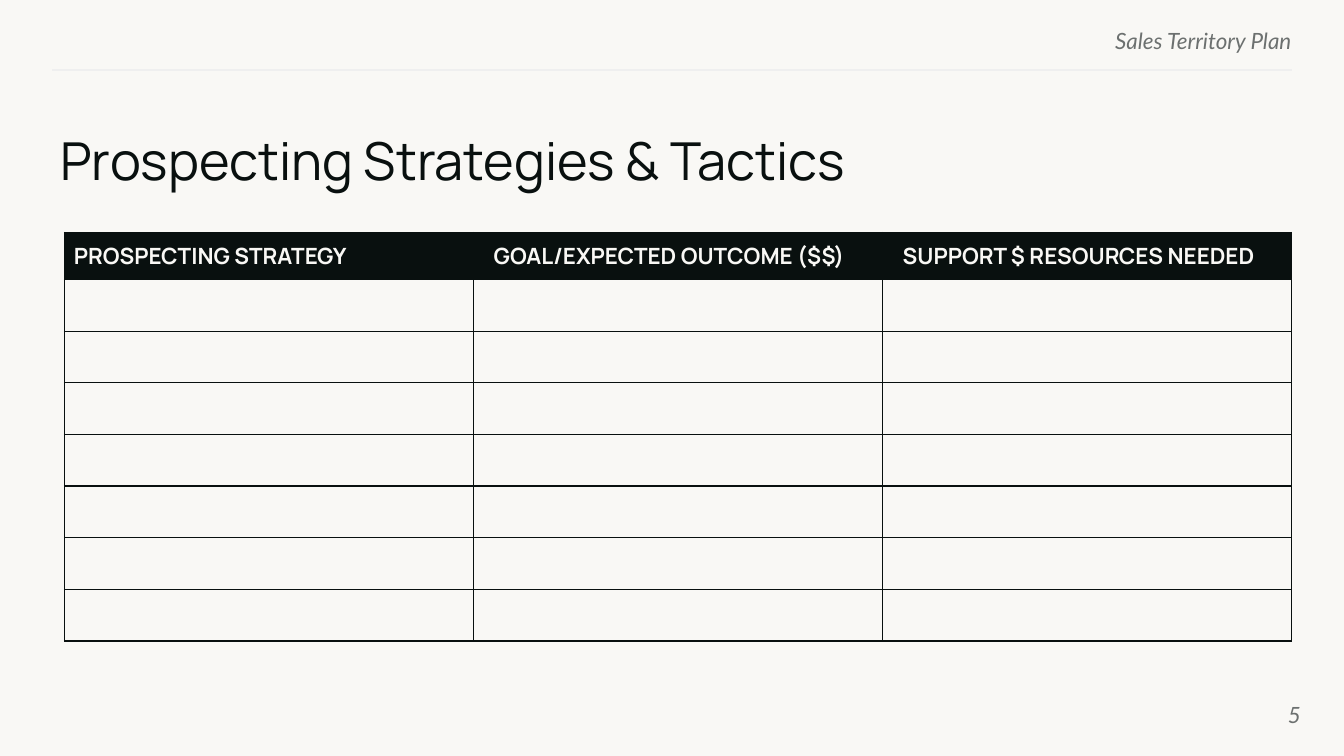
import pptx
import pptx.dml.color
import pptx.enum.shapes
import pptx.enum.text
import pptx.oxml
import pptx.oxml.ns
import pptx.util
import lxml.etree

WIDTH = 10
HEIGHT = WIDTH * 9 / 16
INK, PAPER, GREY, RULE = "09100F", "F9F8F5", "6C706F", "EFEFEF"
HEADINGS = [
    "PROSPECTING STRATEGY",
    "GOAL/EXPECTED OUTCOME ($$)",
    "SUPPORT $ RESOURCES NEEDED",
]
BODY_ROWS = 7
HEADER_HEIGHT = 0.35

ALIGN = pptx.enum.text.PP_ALIGN
ANCHOR = pptx.enum.text.MSO_ANCHOR
inches = pptx.util.Inches


def color(hex_string):
    return pptx.dml.color.RGBColor.from_string(hex_string)


def paint(fill, hex_string):
    fill.solid()
    fill.fore_color.rgb = color(hex_string)


def write(text_frame, text, font, size, hex_string, align, bold=False, italic=False):
    text_frame.text = text
    paragraph = text_frame.paragraphs[0]
    paragraph.alignment = align
    run_font = paragraph.runs[0].font
    run_font.name, run_font.size = font, pptx.util.Pt(size)
    run_font.bold, run_font.italic = bold, italic
    run_font.color.rgb = color(hex_string)


def set_frame(text_frame, anchor):
    text_frame.word_wrap = True
    text_frame.auto_size = pptx.enum.text.MSO_AUTO_SIZE.NONE
    text_frame.vertical_anchor = anchor
    text_frame.margin_left = text_frame.margin_right = 0
    text_frame.margin_top = text_frame.margin_bottom = 0


def add_note(slide, box, text, anchor):
    """Small grey italic text, aligned right."""
    shape = slide.shapes.add_textbox(*map(inches, box))
    set_frame(shape.text_frame, anchor)
    write(shape.text_frame, text, "Lato", 12, GREY, ALIGN.RIGHT, italic=True)


def add_header(slide, box):
    """Document name above a thin rule along the bottom of the box."""
    left, top, width, height = box
    bottom = top + height
    rule = slide.shapes.add_connector(
        pptx.enum.shapes.MSO_CONNECTOR.STRAIGHT,
        *map(inches, (left, bottom, left + width, bottom)),
    )
    rule.line.color.rgb = color(RULE)
    rule.line.width = pptx.util.Pt(0.75)
    lxml.etree.SubElement(rule._element.spPr, pptx.oxml.ns.qn("a:effectLst"))
    add_note(slide, (left + width / 2, top, width / 2, 0.18),
             "Sales Territory Plan", ANCHOR.TOP)


def place_title(slide, box, text):
    title = slide.shapes.title
    title.left, title.top, title.width, title.height = map(inches, box)
    set_frame(title.text_frame, ANCHOR.BOTTOM)
    write(title.text_frame, text, "Manrope", 28, INK, ALIGN.LEFT)


def add_borders(cell):
    properties = cell._tc.get_or_add_tcPr()
    for side in ("lnL", "lnR", "lnT", "lnB"):
        properties.append(pptx.oxml.parse_xml(
            f'<a:{side} {pptx.oxml.ns.nsdecls("a")} w="{pptx.util.Pt(0.75)}">'
            f'<a:solidFill><a:srgbClr val="{INK}"/></a:solidFill></a:{side}>'
        ))


def add_strategy_table(slide, box):
    """Dark heading row over equal empty rows."""
    columns = len(HEADINGS)
    table = slide.shapes.add_table(BODY_ROWS + 1, columns, *map(inches, box)).table
    for column in table.columns:
        column.width = inches(box[2] / columns)
    body_height = (box[3] - HEADER_HEIGHT) / BODY_ROWS
    for index, row in enumerate(table.rows):
        row.height = inches(body_height if index else HEADER_HEIGHT)
        for cell in row.cells:
            add_borders(cell)
            paint(cell.fill, PAPER if index else INK)
            cell.vertical_anchor = ANCHOR.MIDDLE
            cell.margin_top = cell.margin_bottom = 0

    # Headings
    for index, heading in enumerate(HEADINGS):
        cell = table.cell(0, index)
        cell.margin_left = inches(0.15 if index else 0.07)
        cell.margin_right = inches(0.15 if index else 0.05)
        write(cell.text_frame, heading, "Manrope", 12, PAPER, ALIGN.LEFT, bold=True)


def main():
    presentation = pptx.Presentation()
    presentation.slide_width, presentation.slide_height = inches(WIDTH), inches(HEIGHT)
    slide = presentation.slides.add_slide(presentation.slide_layouts[5])
    paint(slide.background.fill, PAPER)

    add_header(slide, (0.39, 0.2, 9.22, 0.32))
    place_title(slide, (0.45, 0.91, 9.23, 0.51), "Prospecting Strategies & Tactics")
    add_strategy_table(slide, (0.48, 1.73, 9.13, 3.04))
    # Page number
    add_note(slide, (9.08, 5.1, 0.6, 0.43), "5", ANCHOR.MIDDLE)

    presentation.save("out.pptx")


if __name__ == "__main__":
    main()
